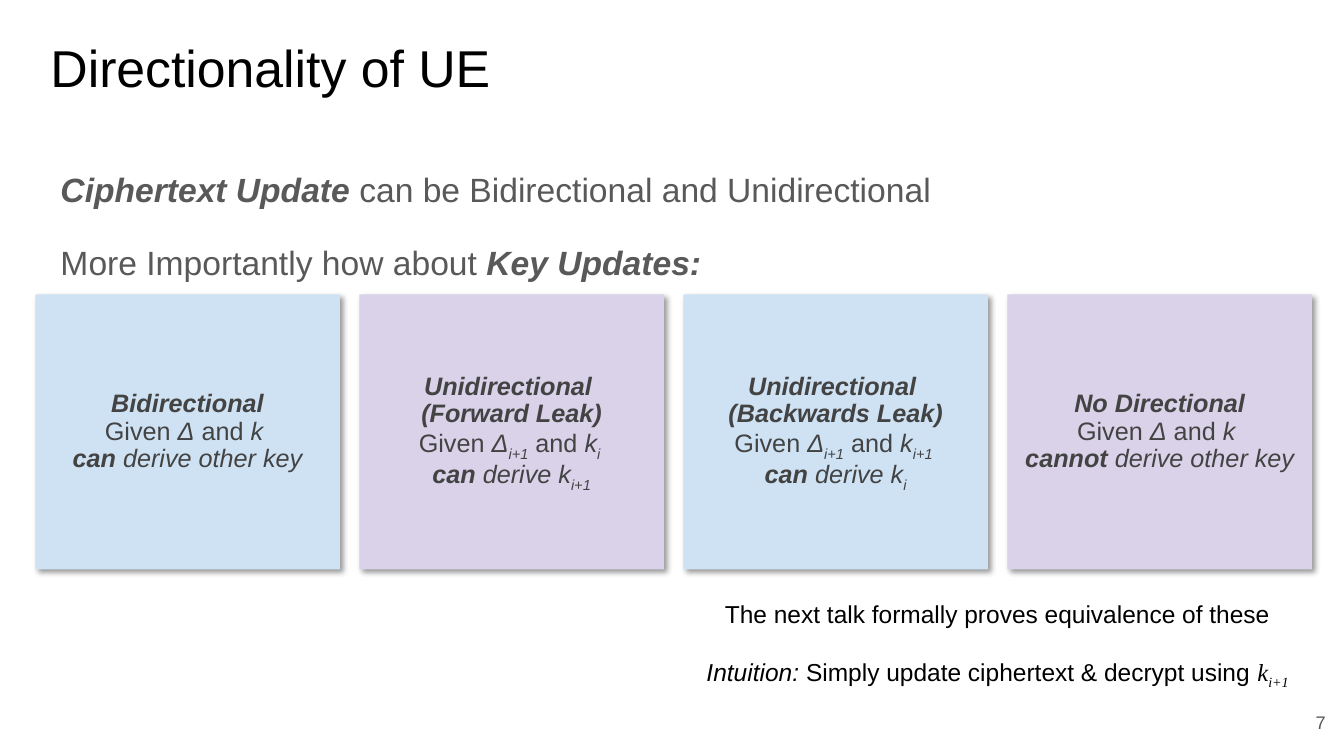
from lxml import etree
from pptx import Presentation
from pptx import util as u
from pptx.dml.color import RGBColor
from pptx.enum import shapes, text
from pptx.oxml import ns

LEFT, MID, RIGHT = text.PP_ALIGN.LEFT, text.PP_ALIGN.CENTER, text.PP_ALIGN.RIGHT
TOP, HALF = text.MSO_ANCHOR.TOP, text.MSO_ANCHOR.MIDDLE
BLUE, LILAC = "CFE2F3", "D9D2E9"

CARDS = [
    (BLUE, [
        [("Bidirectional", "bi")],
        [("Given ", ""), ("Δ", "i"), (" and ", ""), ("k ", "i")],
        [("can ", "bi"), ("derive other key", "i")]]),
    (LILAC, [
        [("Unidirectional ", "bi")],
        [("(Forward Leak)", "bi")],
        [("Given ", ""), ("Δ", "i"), ("i+1", "is"), (" and ", ""), ("k", "i"), ("i ", "is")],
        [("can ", "bi"), ("derive k", "i"), ("i+1", "is")]]),
    (BLUE, [
        [("Unidirectional ", "bi")],
        [("(Backwards Leak)", "bi")],
        [("Given ", ""), ("Δ", "i"), ("i+1", "is"), (" and ", ""), ("k", "i"), ("i+1 ", "is")],
        [("can ", "bi"), ("derive k", "i"), ("i", "is")]]),
    (LILAC, [
        [("No Directional", "bi")],
        [("Given ", ""), ("Δ", "i"), (" and ", ""), ("k ", "i")],
        [("cannot ", "bi"), ("derive other key", "i")]]),
]


def paint(target, code):
    target.rgb = RGBColor.from_string(code)


def place(shape, left, top, width, height):
    shape.left, shape.top = u.Inches(left), u.Inches(top)
    shape.width, shape.height = u.Inches(width), u.Inches(height)


def write(shape, lines, size, color, align=LEFT, anchor=TOP, pad=(0.1, 0.05), gap=0, pitch=0.9):
    frame = shape.text_frame
    frame.word_wrap = True
    frame.auto_size = text.MSO_AUTO_SIZE.NONE
    frame.vertical_anchor = anchor
    frame.margin_left = frame.margin_right = u.Inches(pad[0])
    frame.margin_top = frame.margin_bottom = u.Inches(pad[1])
    for row, line in enumerate(lines):
        para = frame.add_paragraph() if row else frame.paragraphs[0]
        para.alignment, para.line_spacing = align, pitch
        para.space_before = u.Pt(gap if row else 0)
        props = para._p.get_or_add_pPr()
        props.set("marL", "0")
        props.set("indent", "0")
        etree.SubElement(props, ns.qn("a:buNone"))
        for words, style in line:
            run = para.add_run()
            run.text = words
            font = run.font
            font.name = "Times New Roman" if "t" in style else "Arial"
            font.size = u.Pt(size)
            font.bold, font.italic = "b" in style, "i" in style
            paint(font.color, color)
            if "s" in style:
                font._element.set("baseline", "-25000")


def shade(shape):
    shape.shadow.inherit = False
    effects = shape._element.spPr.find(ns.qn("a:effectLst"))
    outer = etree.SubElement(effects, ns.qn("a:outerShdw"), blurRad=str(u.Pt(4)),
                             dist=str(u.Pt(3)), dir="2700000", algn="tl", rotWithShape="0")
    color = etree.SubElement(outer, ns.qn("a:srgbClr"), val="000000")
    etree.SubElement(color, ns.qn("a:alpha"), val="40000")


def card(slide, left, fill, lines):
    box = slide.shapes.add_shape(shapes.MSO_SHAPE.RECTANGLE, u.Inches(left),
                                 u.Inches(2.92), u.Inches(3.02), u.Inches(2.73))
    box.fill.solid()
    paint(box.fill.fore_color, fill)
    box.line.fill.background()
    shade(box)
    write(box, lines, 18, "434343", align=MID, anchor=HALF, pad=(0, 0))


def main():
    deck = Presentation()
    deck.slide_width, deck.slide_height = u.Inches(13.33), u.Inches(7.5)
    slide = deck.slides.add_slide(deck.slide_layouts[3])
    title, body, note = slide.placeholders

    place(title, 0.4, 0.29, 11.67, 0.83)
    write(title, [[("Directionality of UE", "")]], 37, "000000", anchor=HALF)

    place(body, 0.5, 1.67, 12.34, 1.24)
    write(body, [
        [("Ciphertext Update", "bi"), (" can be Bidirectional and Unidirectional", "")],
        [("More Importantly how about ", ""), ("Key Updates:", "bi")],
    ], 24, "595959", gap=26)

    for col, (fill, lines) in enumerate(CARDS):
        card(slide, 0.35 + col * 3.214, fill, lines)

    place(note, 6.78, 5.93, 6.23, 1.24)
    write(note, [
        [("The next talk formally proves equivalence of these", "")],
        [("Intuition:", "i"), (" Simply update ciphertext & decrypt using ", ""),
         ("k", "it"), ("i+1", "its")],
    ], 17.5, "000000", align=MID, gap=20)

    page = slide.shapes.add_textbox(0, 0, 0, 0)
    place(page, 12.48, 6.93, 0.8, 0.57)
    write(page, [[("7", "")]], 13, "595959", align=RIGHT, pad=(0.13, 0.13), pitch=1.0)

    deck.save("out.pptx")


if __name__ == "__main__":
    main()
